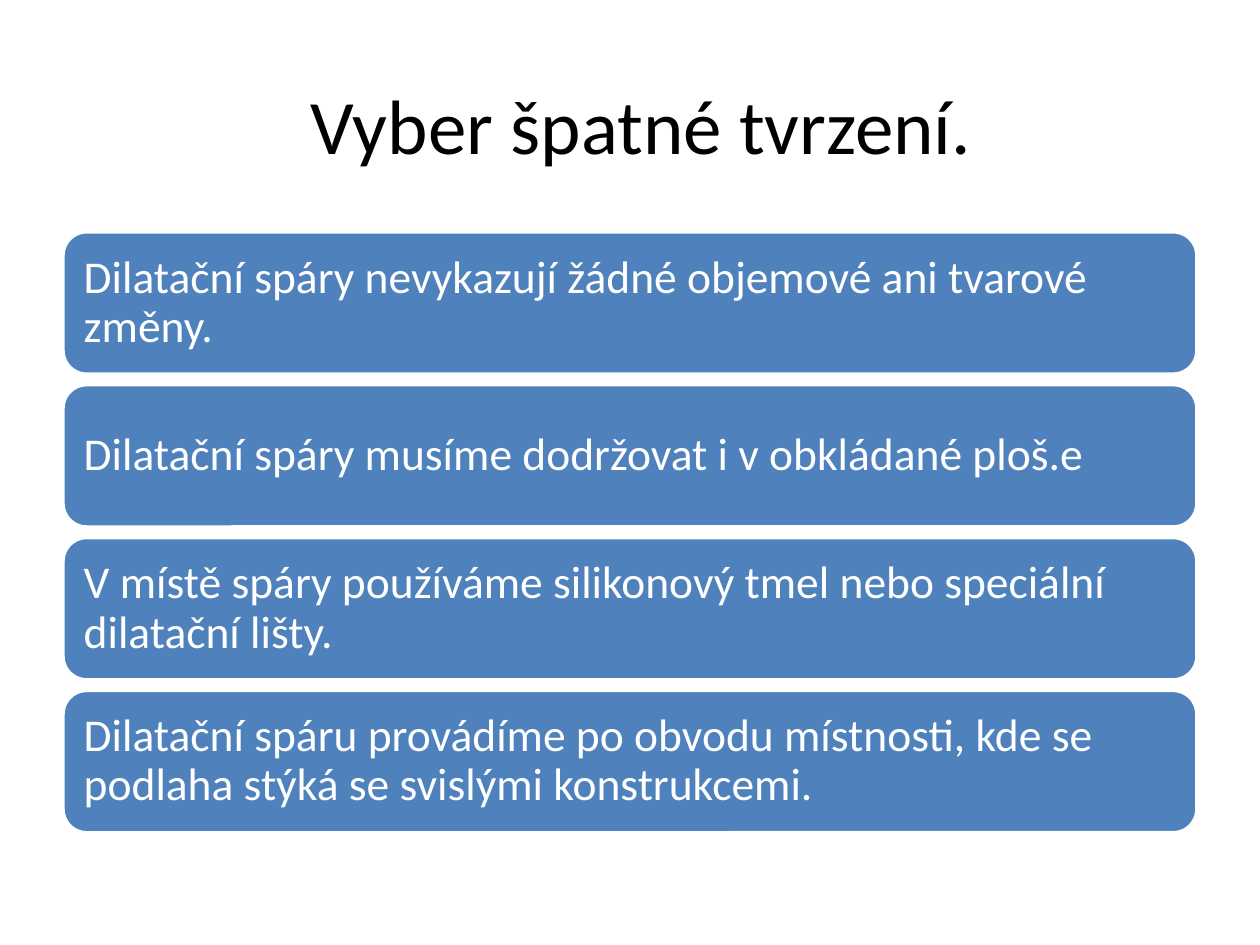
import pptx
import pptx.util
import pptx.dml.color
import pptx.enum.shapes
import pptx.enum.text

Inches, Pt = pptx.util.Inches, pptx.util.Pt
ALIGN = pptx.enum.text.PP_ALIGN
MIDDLE = pptx.enum.text.MSO_ANCHOR.MIDDLE

TITLE = "Vyber špatné tvrzení."
CLAIMS = [
    "Dilatační spáry nevykazují žádné objemové ani tvarové změny.",
    "Dilatační spáry musíme dodržovat i v obkládané ploš.e",
    "V místě spáry používáme silikonový tmel nebo speciální dilatační lišty.",
    "Dilatační spáru provádíme po obvodu místnosti, kde se podlaha stýká se svislými konstrukcemi.",
]
COLORS = {"bar": "4F81BD", "light": "FFFFFF", "dark": "000000"}
FONT = "Calibri"
LEFT, WIDTH, HEIGHT = 0.5, 9, 1.13
FIRST, LAST = 1.84, 5.48
STEP = (LAST - FIRST) / (len(CLAIMS) - 1)
INSET = Inches(0.11)


def color(name):
    return pptx.dml.color.RGBColor.from_string(COLORS[name])


def write(shape, text, size, tint, align):
    frame = shape.text_frame
    frame.text = text
    frame.word_wrap = True
    frame.vertical_anchor = MIDDLE
    par = frame.paragraphs[0]
    par.alignment = align
    font = par.runs[0].font
    font.name, font.size = FONT, Pt(size)
    font.color.rgb = color(tint)
    return frame


def add_bar(slide, text, top):
    bar = slide.shapes.add_shape(
        pptx.enum.shapes.MSO_SHAPE.ROUNDED_RECTANGLE,
        Inches(LEFT), Inches(top), Inches(WIDTH), Inches(HEIGHT))
    bar.shadow.inherit = False
    bar.fill.solid()
    bar.fill.fore_color.rgb = color("bar")
    bar.line.color.rgb = color("light")
    bar.line.width = Pt(2)
    frame = write(bar, text, 26, "light", ALIGN.LEFT)
    frame.margin_left = frame.margin_right = INSET
    frame.margin_top = frame.margin_bottom = INSET
    frame.paragraphs[0].line_spacing = 0.9


def main():
    deck = pptx.Presentation()
    deck.slide_width, deck.slide_height = Inches(10), Inches(7.5)
    slide = deck.slides.add_slide(deck.slide_layouts[5])
    title = slide.shapes.title
    title.left, title.top = Inches(0.59), Inches(0.36)
    title.width, title.height = Inches(9), Inches(1.25)
    write(title, TITLE, 44, "dark", ALIGN.CENTER)
    for row, claim in enumerate(CLAIMS):
        add_bar(slide, claim, FIRST + row * STEP)
    deck.save("out.pptx")


if __name__ == "__main__":
    main()
